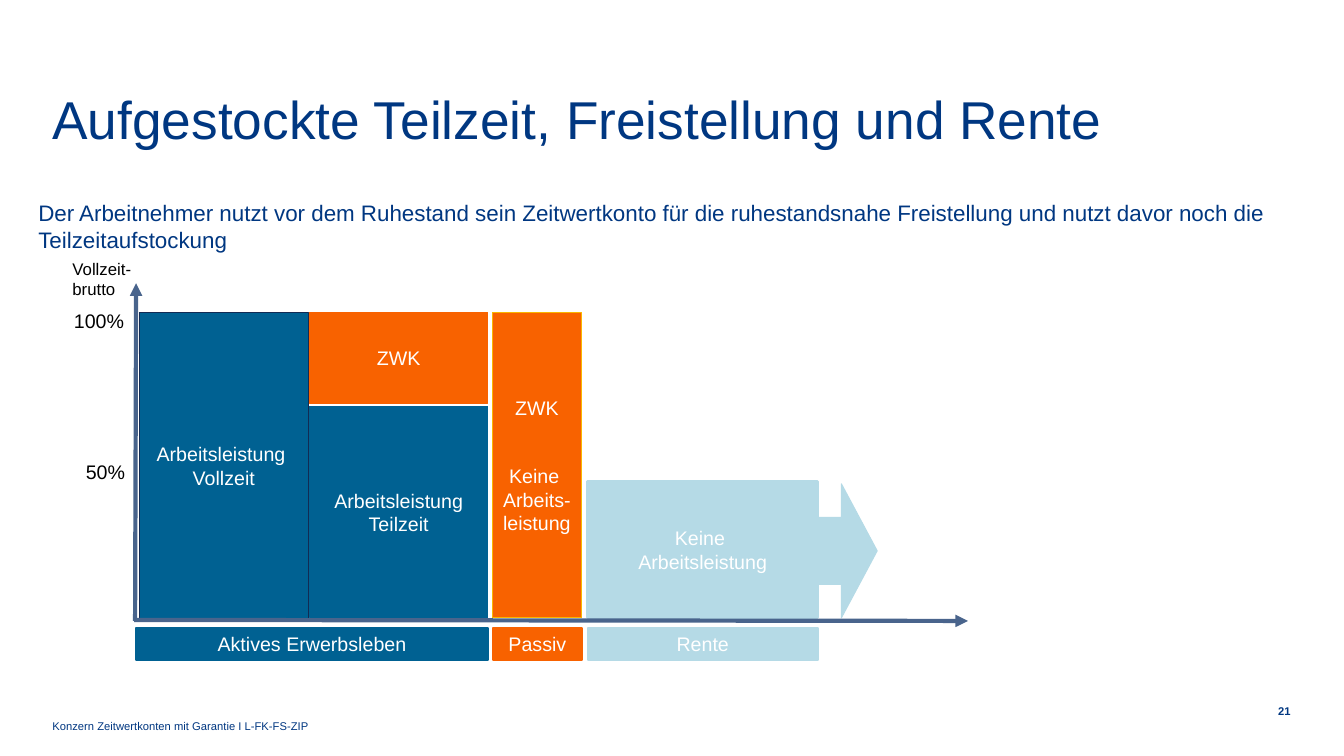
from lxml import etree
from pptx import Presentation
from pptx import util as u
from pptx.dml.color import RGBColor
from pptx.enum import shapes, text
from pptx.oxml import ns

PX = 9144
THEME = {
    "font": "Arial", "navy": "003781", "blue": "006192", "outline": "122B54",
    "orange": "F86200", "yellow": "FAB600", "pale": "B5DAE6", "axis": "49648C",
    "white": "FFFFFF", "black": "000000",
    "title": 38, "lead": 16, "label": 14, "unit": 12, "small": 8,
}
ALIGN = text.PP_ALIGN
ANCHOR = text.MSO_ANCHOR
SHAPE = shapes.MSO_SHAPE


def color(name):
    return RGBColor.from_string(THEME[name])


def write(shape, lines, size, ink, align=ALIGN.LEFT, anchor=ANCHOR.TOP,
          wrap=True, inset=(0, 0), spacing=None, bold=False):
    frame = shape.text_frame
    frame.text = "\n".join(lines)
    frame_format = {
        "word_wrap": wrap, "auto_size": text.MSO_AUTO_SIZE.NONE,
        "vertical_anchor": anchor,
        "margin_left": inset[0] * PX, "margin_right": inset[0] * PX,
        "margin_top": inset[1] * PX, "margin_bottom": inset[1] * PX,
    }
    for name, value in frame_format.items():
        setattr(frame, name, value)
    for paragraph in frame.paragraphs:
        paragraph_format = {"alignment": align, "line_spacing": spacing,
                            "space_before": u.Pt(0)}
        for name, value in paragraph_format.items():
            setattr(paragraph, name, value)
        for run in paragraph.runs:
            run_format = {"name": THEME["font"], "size": u.Pt(THEME[size]), "bold": bold}
            for name, value in run_format.items():
                setattr(run.font, name, value)
            run.font.color.rgb = color(ink)


presentation = Presentation()
presentation.slide_width = 1333 * PX
presentation.slide_height = 750 * PX
slide = presentation.slides.add_slide(presentation.slide_layouts[1])

title = slide.shapes.title
body = slide.placeholders[1]
for placeholder, box in ((title, (52, 96, 1068, 102)), (body, (38, 198, 1228, 477))):
    for name, value in zip(("left", "top", "width", "height"), box):
        setattr(placeholder, name, value * PX)

write(title, ["Aufgestockte Teilzeit, Freistellung und Rente"], "title", "navy",
      spacing=u.Pt(38))
write(body, ["Der Arbeitnehmer nutzt vor dem Ruhestand sein Zeitwertkonto für die "
             "ruhestandsnahe Freistellung und nutzt davor noch die Teilzeitaufstockung"],
      "lead", "navy")
properties = body.text_frame.paragraphs[0]._p.get_or_add_pPr()
properties.set("marL", "0")
properties.set("indent", "0")
etree.SubElement(properties, ns.qn("a:buNone"))

BAR_TOP, BAR_HEIGHT = 623, 32
blocks = [
    (SHAPE.RECTANGLE, (138, 310, 168, 304), "blue", "outline", 0.75,
     ["Arbeitsleistung ", "Vollzeit"]),
    (SHAPE.RECTANGLE, (583, 478, 228, 135), "pale", "pale", 2.25,
     ["Keine ", "Arbeitsleistung"]),
    (SHAPE.RIGHT_ARROW, (799, 480, 71, 133), "pale", "pale", 0.75, []),
    (SHAPE.RECTANGLE, (307, 403, 177, 210), "blue", "blue", 0.75,
     ["Arbeitsleistung", "Teilzeit"]),
    (SHAPE.RECTANGLE, (307, 310, 177, 90), "orange", "orange", 0.75, ["ZWK"]),
    (SHAPE.RECTANGLE, (488, 310, 89, 303), "orange", "yellow", 0.75,
     ["ZWK", "Keine ", "Arbeits-", "leistung"]),
    (SHAPE.RECTANGLE, (135, BAR_TOP, 349, BAR_HEIGHT), "blue", "blue", 1.5,
     ["Aktives Erwerbsleben"]),
    (SHAPE.RECTANGLE, (489, BAR_TOP, 88, BAR_HEIGHT), "orange", "orange", 1.5, ["Passiv"]),
    (SHAPE.RECTANGLE, (583, BAR_TOP, 228, BAR_HEIGHT), "pale", "pale", 1.5, ["Rente"]),
]
for kind, box, fill, outline, weight, lines in blocks:
    block = slide.shapes.add_shape(kind, *(value * PX for value in box))
    block.shadow.inherit = False
    block.fill.solid()
    block.fill.fore_color.rgb = color(fill)
    block.line.color.rgb = color(outline)
    block.line.width = u.Pt(weight)
    if lines:
        write(block, lines, "label", "white", ALIGN.CENTER, ANCHOR.MIDDLE,
              wrap=False, inset=(10, 5))
    if len(lines) == 4:
        block.text_frame.paragraphs[1].space_before = u.Pt(32)

for start_x, start_y, end_x, end_y in ((133, 615, 960, 616), (134, 616, 135, 281)):
    axis = slide.shapes.add_connector(
        shapes.MSO_CONNECTOR.STRAIGHT,
        start_x * PX, start_y * PX, end_x * PX, end_y * PX)
    axis.line.color.rgb = color("axis")
    axis.line.width = u.Pt(3)
    etree.SubElement(axis.line._get_or_add_ln(), ns.qn("a:tailEnd"), type="triangle")
    etree.SubElement(axis._element.spPr, ns.qn("a:effectLst"))

labels = [
    ((62, 252, 104, 49), "Vollzeit- brutto", "unit", "black", {"inset": (10, 5)}),
    ((62, 302, 71, 33), "100%", "label", "black", {"align": ALIGN.RIGHT, "inset": (10, 5)}),
    ((36, 451, 98, 33), "50%", "label", "black", {"align": ALIGN.RIGHT, "inset": (10, 5)}),
    ((52, 689, 1020, 38), "Konzern Zeitwertkonten mit Garantie I L-FK-FS-ZIP", "small", "navy",
     {"anchor": ANCHOR.BOTTOM, "spacing": 0.9}),
    ((1251, 697, 29, 16), "21", "small", "navy",
     {"align": ALIGN.RIGHT, "anchor": ANCHOR.MIDDLE, "spacing": u.Pt(10), "bold": True}),
]
for box, wording, size, ink, options in labels:
    label = slide.shapes.add_textbox(*(value * PX for value in box))
    write(label, [wording], size, ink, **options)

presentation.save("out.pptx")
